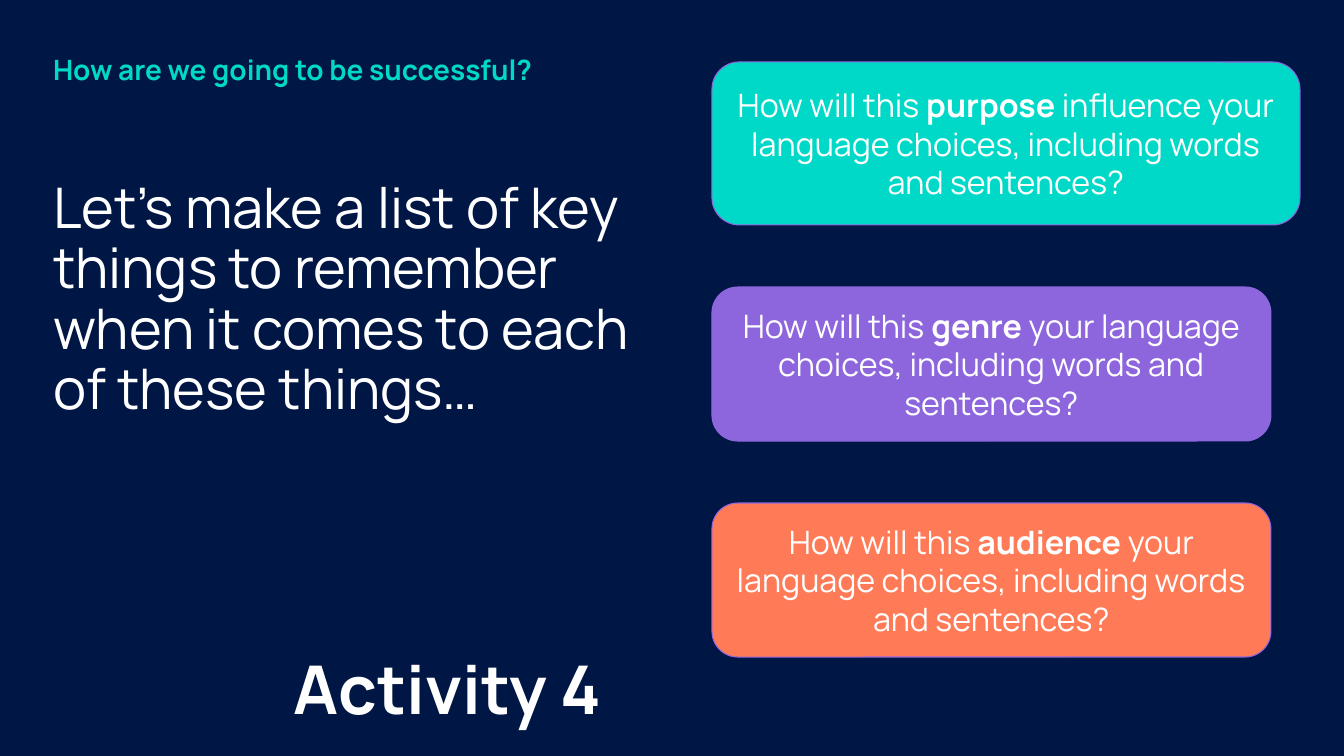
from pptx import Presentation
from pptx.dml.color import RGBColor
from pptx.enum.shapes import MSO_SHAPE as Shape
from pptx.enum.text import MSO_ANCHOR as Anchor, PP_ALIGN as Align
from pptx.util import Emu, Pt

NAVY = RGBColor(0x00, 0x16, 0x45)
TEAL = RGBColor(0x00, 0xD9, 0xC7)
PURPLE = RGBColor(0x8D, 0x66, 0xDD)
CORAL = RGBColor(0xFF, 0x7B, 0x57)
WHITE = RGBColor(0xFF, 0xFF, 0xFF)

FONT = "Manrope"
PX_PER_INCH = 100.8
CARD_GAP = 62
CARDS = [
    (588, 163, TEAL, "purpose", "influence your"),
    (559, 154, PURPLE, "genre", "your"),
    (559, 154, CORAL, "audience", "your"),
]


def px(length):
    """Turn a length in px into EMU."""
    return Emu(round(length * 914400 / PX_PER_INCH))


def set_frame(frame, inset, anchor):
    """Make a text frame wrap, with equal insets on all sides."""
    frame.word_wrap = True
    frame.vertical_anchor = anchor
    frame.margin_left = frame.margin_right = px(inset)
    frame.margin_top = frame.margin_bottom = px(inset)


def set_font(para, size, color=WHITE, bold=None):
    """Give a paragraph its font."""
    font = para.font
    font.name = FONT
    font.size = Pt(size)
    font.color.rgb = color
    font.bold = bold


def add_text(page, box, text, size, spacing, color=WHITE, bold=None):
    """Place one paragraph of text without insets."""
    frame = page.shapes.add_textbox(*map(px, box)).text_frame
    set_frame(frame, 0, Anchor.TOP)
    para = frame.paragraphs[0]
    para.text = text
    para.line_spacing = spacing
    set_font(para, size, color, bold)


def add_block(page, kind, box, fill):
    """Place a filled shape without line or shadow."""
    block = page.shapes.add_shape(kind, *map(px, box))
    block.shadow.inherit = False
    block.fill.solid()
    block.fill.fore_color.rgb = fill
    block.line.fill.background()
    return block


def add_card(page, box, fill, keyword, verb):
    """Place a rounded card that asks about one keyword."""
    card = add_block(page, Shape.ROUNDED_RECTANGLE, box, fill)
    card.adjustments[0] = 0.167
    card.line.color.rgb = PURPLE
    card.line.width = Pt(0.75)
    set_frame(card.text_frame, 10, Anchor.MIDDLE)
    para = card.text_frame.paragraphs[0]
    para.alignment = Align.CENTER
    set_font(para, 23)
    ending = f" {verb} language choices, including words and sentences?"
    for text, bold in [("How will this ", False), (keyword, True), (ending, False)]:
        span = para.add_run()
        span.text = text
        span.font.bold = bold


def add_cards(page, left, top):
    """Stack the question cards with equal gaps."""
    for width, height, fill, keyword, verb in CARDS:
        add_card(page, (left, top, width, height), fill, keyword, verb)
        top += height + CARD_GAP


def add_activity(page, box):
    """Place the activity label on its own block."""
    block = add_block(page, Shape.RECTANGLE, box, NAVY)
    set_frame(block.text_frame, 10, Anchor.TOP)
    para = block.text_frame.paragraphs[0]
    para.text = "Activity 4"
    para.alignment = Align.LEFT
    para.line_spacing = 1.15
    set_font(para, 48, bold=True)


def main():
    """Build the slide and save it."""
    deck = Presentation()
    deck.slide_width, deck.slide_height = px(1344), px(756)
    page = deck.slides.add_slide(deck.slide_layouts[6])
    page.background.fill.solid()
    page.background.fill.fore_color.rgb = NAVY
    add_text(page, (53, 180, 585, 427),
             "Let’s make a list of key things to remember when it comes to each of these things…",
             40, 0.9)
    add_text(page, (53, 46, 618, 39), "How are we going to be successful?",
             20, 1.2, TEAL, True)
    add_cards(page, 712, 62)
    add_activity(page, (284, 625, 372, 102))
    deck.save("out.pptx")


if __name__ == "__main__":
    main()
